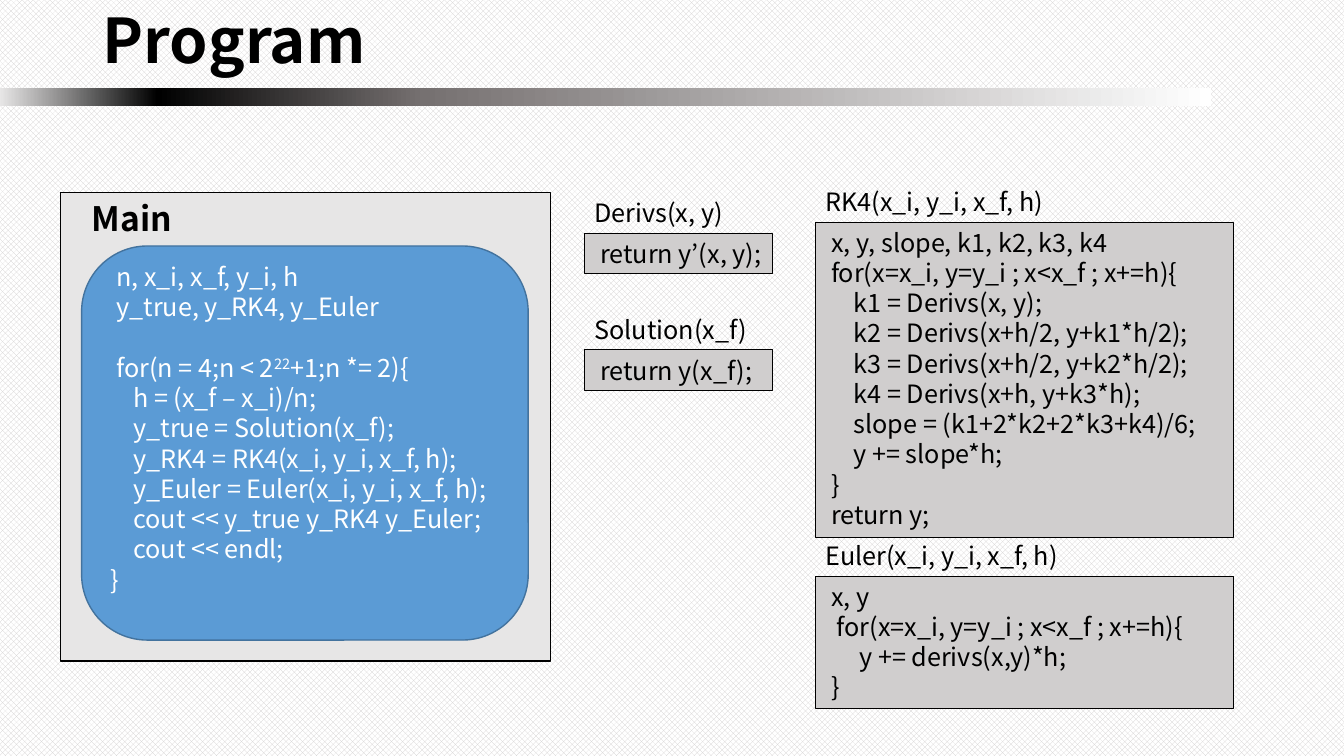
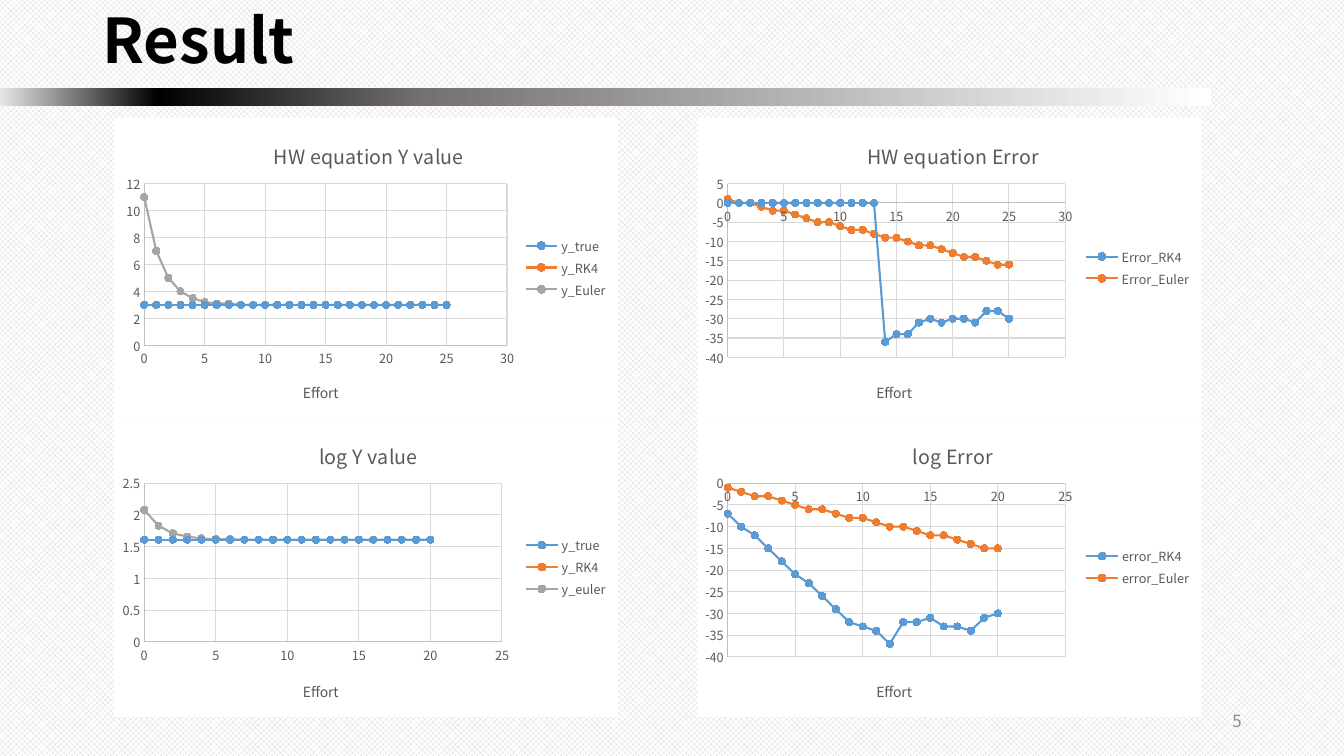
from pptx import Presentation
from pptx.chart.data import XyChartData
from pptx.dml.color import RGBColor
from pptx.enum.chart import XL_CHART_TYPE, XL_LEGEND_POSITION, XL_MARKER_STYLE, XL_TICK_MARK
from pptx.enum.dml import MSO_PATTERN
from pptx.enum.shapes import MSO_SHAPE
from pptx.enum.text import MSO_ANCHOR, MSO_AUTO_SIZE, PP_ALIGN
from pptx.oxml import parse_xml
from pptx.oxml.ns import nsdecls, qn
from pptx.util import Pt

RECT, ROUNDED = MSO_SHAPE.RECTANGLE, MSO_SHAPE.ROUNDED_RECTANGLE
LEFT, RIGHT = PP_ALIGN.LEFT, PP_ALIGN.RIGHT
TOP, MIDDLE = MSO_ANCHOR.TOP, MSO_ANCHOR.MIDDLE
CIRCLE, NO_TICK = XL_MARKER_STYLE.CIRCLE, XL_TICK_MARK.NONE
OPEN_DIAMOND = MSO_PATTERN.from_xml("openDmnd")

FONT = "Noto Sans CJK KR"
BLACK, WHITE, GRAY, PALE = "000000", "FFFFFF", "D0CECE", "E7E6E6"
BLUE, ORANGE, SILVER, DARK_BLUE = "5B9BD5", "ED7D31", "A5A5A5", "43739E"
CHART_TEXT, AXIS_LINE, GRID_LINE = "595959", "BFBFBF", "D9D9D9"
BAND_STOPS = [(0, PALE), (13, BLACK), (35, "767171"), (100, WHITE)]
LINE_STEP = 21.8

MAIN_CODE = [
    " n, x_i, x_f, y_i, h",
    " y_true, y_RK4, y_Euler",
    " for(n = 4;n < 2^22^+1;n *= 2){",
    "    h = (x_f – x_i)/n;",
    "    y_true = Solution(x_f);",
    "    y_RK4 = RK4(x_i, y_i, x_f, h);",
    "    y_Euler = Euler(x_i, y_i, x_f, h);",
    "    cout << y_true y_RK4 y_Euler;",
    "    cout << endl;",
    "}",
]
FUNCTIONS = [
    (417.6, 137.5, 134.6, 134.6, "Derivs(x, y)", [" return y’(x, y);"]),
    (417.6, 221, 134.6, 134.6, "Solution(x_f)", [" return y(x_f);"]),
    (582.5, 129.6, 298.8, 229.7, "RK4(x_i, y_i, x_f, h)", [
        " x, y, slope, k1, k2, k3, k4",
        " for(x=x_i, y=y_i ; x<x_f ; x+=h){",
        "     k1 = Derivs(x, y);",
        "     k2 = Derivs(x+h/2, y+k1*h/2);",
        "     k3 = Derivs(x+h/2, y+k2*h/2);",
        "     k4 = Derivs(x+h, y+k3*h);",
        "     slope = (k1+2*k2+2*k3+k4)/6;",
        "     y += slope*h;",
        " }",
        " return y;",
    ]),
    (582.5, 382.5, 298.8, 229.7, "Euler(x_i, y_i, x_f, h)", [
        " x, y",
        "  for(x=x_i, y=y_i ; x<x_f ; x+=h){",
        "      y += derivs(x,y)*h;",
        " }",
    ]),
]
CHARTS = [
    {"title": "HW equation Y value", "title_x": 0.31, "effort_x": 0.37,
     "plot": (0.06, 0.22, 0.72, 0.54), "x_axis": (0, 30, 5), "y_axis": (0, 12, 2),
     "series": [("y_true", BLUE, [3] * 26),
                ("y_RK4", ORANGE, [3] * 26),
                ("y_Euler", SILVER, [11, 7, 5, 4, 3.5, 3.2, 3.1, 3.1] + [3] * 18)]},
    {"title": "HW equation Error", "title_x": 0.33, "effort_x": 0.35,
     "plot": (0.06, 0.22, 0.67, 0.58), "x_axis": (0, 30, 5), "y_axis": (-40, 5, 5),
     "series": [("Error_RK4", BLUE, [0] * 14 + [-36, -34, -34, -31, -30, -31, -30, -30,
                                                -31, -28, -28, -30]),
                ("Error_Euler", ORANGE, [1, 0, 0, -1, -2, -2, -3, -4, -5, -5, -6, -7, -7,
                                         -8, -9, -9, -10, -11, -11, -12, -13, -14, -14,
                                         -15, -16, -16])]},
    {"title": "log Y value", "title_x": 0.4, "effort_x": 0.37,
     "plot": (0.06, 0.22, 0.71, 0.53), "x_axis": (0, 25, 5), "y_axis": (0, 2.5, 0.5),
     "series": [("y_true", BLUE, [1.61] * 21),
                ("y_RK4", ORANGE, [1.61] * 21),
                ("y_euler", SILVER, [2.08, 1.83, 1.71, 1.66, 1.63, 1.62, 1.62] + [1.61] * 14)]},
    {"title": "log Error", "title_x": 0.42, "effort_x": 0.35,
     "plot": (0.06, 0.22, 0.67, 0.58), "x_axis": (0, 25, 5), "y_axis": (-40, 0, 5),
     "series": [("error_RK4", BLUE, [-7, -10, -12, -15, -18, -21, -23, -26, -29, -32, -33,
                                     -34, -37, -32, -32, -31, -33, -33, -34, -31, -30]),
                ("error_Euler", ORANGE, [-1, -2, -3, -3, -4, -5, -6, -6, -7, -8, -8, -9,
                                         -10, -10, -11, -12, -12, -13, -14, -15, -15])]},
]


def color(value):
    return RGBColor.from_string(value)


def points(*values):
    return [Pt(value) for value in values]


def style_font(font, size, tint, bold=False):
    font.name, font.size, font.bold = FONT, Pt(size), bold
    font.color.rgb = color(tint)


def write(frame, lines, size=18, tint=BLACK, bold=False, align=LEFT, anchor=TOP,
          wrap=True, spacing=None, gaps=None):
    frame.word_wrap, frame.vertical_anchor = wrap, anchor
    frame.auto_size = MSO_AUTO_SIZE.NONE
    for index, line in enumerate(lines):
        para = frame.add_paragraph() if index else frame.paragraphs[0]
        para.alignment = align
        if spacing:
            para.line_spacing = spacing
        if gaps and index in gaps:
            para.space_before = Pt(gaps[index])
        for part, text in enumerate(line.split("^")):
            span = para.add_run()
            span.text = text
            style_font(span.font, size, tint, bold)
            if part % 2:
                span._r.get_or_add_rPr().set("baseline", "30000")


def add_text(page, place, text, **look):
    box = page.shapes.add_textbox(*points(*place))
    write(box.text_frame, [text], **look)


def add_box(page, place, fill, line=BLACK, width=0.75, kind=RECT):
    box = page.shapes.add_shape(kind, *points(*place))
    box.shadow.inherit = False
    box.fill.solid()
    box.fill.fore_color.rgb = color(fill)
    box.line.color.rgb = color(line)
    box.line.width = Pt(width)
    return box


def add_page(deck, layout, title, place):
    page = deck.slides.add_slide(layout)
    heading = page.shapes.title
    heading.left, heading.top, heading.width, heading.height = points(*place)
    write(heading.text_frame, [title], size=44, bold=True, anchor=MIDDLE, spacing=0.9)
    return page


def move_band_to_layout(page, layout):
    band = page.shapes.add_shape(RECT, *points(0, 62.6, 865.4, 13))
    band.shadow.inherit = False
    band.line.fill.background()
    band.fill.gradient()
    band.fill.gradient_angle = 0
    stops = band.element.spPr.find(".//" + qn("a:gsLst"))
    for stop in list(stops):
        stops.remove(stop)
    for percent, tint in BAND_STOPS:
        stops.append(parse_xml(f'<a:gs {nsdecls("a")} pos="{percent * 1000}">'
                               f'<a:srgbClr val="{tint}"/></a:gs>'))
    layout.shapes.element.insert(2, band.element)


def make_layout(parent, x, y, width=None, height=None):
    for old in parent.findall(qn("c:layout")):
        parent.remove(old)
    fields = [("xMode", "edge"), ("yMode", "edge"), ("x", x), ("y", y)]
    if width:
        fields = [("layoutTarget", "inner")] + fields + [("w", width), ("h", height)]
    body = "".join(f'<c:{name} val="{value}"/>' for name, value in fields)
    return parse_xml(f'<c:layout {nsdecls("c")}><c:manualLayout>{body}'
                     '</c:manualLayout></c:layout>')


def set_title(title, text, size, x, y):
    para = title.text_frame.paragraphs[0]
    span = para.add_run()
    span.text = text
    style_font(span.font, size, CHART_TEXT)
    layout = make_layout(title.element, x, y)
    title.element.find(qn("c:tx")).addnext(layout)


def style_axis(axis, scale):
    axis.minimum_scale, axis.maximum_scale, axis.major_unit = scale
    axis.major_tick_mark = axis.minor_tick_mark = NO_TICK
    axis.has_major_gridlines = True
    for line, tint in ((axis.format.line, AXIS_LINE),
                       (axis.major_gridlines.format.line, GRID_LINE)):
        line.color.rgb = color(tint)
        line.width = Pt(0.75)
    style_font(axis.tick_labels.font, 9, CHART_TEXT)
    axis.tick_labels.number_format = "General"
    axis.tick_labels.number_format_is_linked = False


def add_scatter(page, place, item):
    data = XyChartData()
    for name, tint, values in item["series"]:
        series = data.add_series(name)
        for effort, value in enumerate(values):
            series.add_data_point(effort, value)
    chart = page.shapes.add_chart(XL_CHART_TYPE.XY_SCATTER_LINES, *points(*place), data).chart
    style_font(chart.font, 10, BLACK)
    chart.has_title = True
    set_title(chart.chart_title, item["title"], 14, item["title_x"], 0.06)
    chart.has_legend = True
    chart.legend.position = XL_LEGEND_POSITION.RIGHT
    chart.legend.include_in_layout = False
    style_font(chart.legend.font, 9, CHART_TEXT)
    style_axis(chart.category_axis, item["x_axis"])
    style_axis(chart.value_axis, item["y_axis"])
    chart.category_axis.has_title = True
    set_title(chart.category_axis.axis_title, "Effort", 10, item["effort_x"], 0.87)
    plot = chart.plots[0]
    plot.vary_by_categories = False
    for series, (name, tint, values) in zip(plot.series, item["series"]):
        series.smooth = False
        series.format.line.color.rgb = color(tint)
        series.format.line.width = Pt(1.5)
        marker = series.marker
        marker.style, marker.size = CIRCLE, 5
        marker.format.fill.solid()
        marker.format.fill.fore_color.rgb = color(tint)
        marker.format.line.color.rgb = color(tint)
    area = chart.element.find(".//" + qn("c:plotArea"))
    area.insert(0, make_layout(area, *item["plot"]))
    chart.element.find(qn("c:chart")).addnext(parse_xml(
        f'<c:spPr {nsdecls("c", "a")}><a:solidFill><a:srgbClr val="{WHITE}"/></a:solidFill>'
        '<a:ln><a:noFill/></a:ln></c:spPr>'))


def build_program(page):
    add_box(page, (43.2, 137.5, 350, 334.8), PALE, width=1)
    add_text(page, (58.3, 137.5, 119.5, 100.8), "Main", size=24, bold=True, wrap=False)
    main_box = add_box(page, (58.3, 175.7, 319, 281.5), BLUE, DARK_BLUE, 1, ROUNDED)
    main_box.text_frame.margin_bottom = Pt(3.6 + LINE_STEP)
    write(main_box.text_frame, MAIN_CODE, tint=WHITE, anchor=MIDDLE, gaps={2: LINE_STEP})
    for left, top, width, label_width, label, code in FUNCTIONS:
        label_height = LINE_STEP + 7.2
        add_text(page, (left, top, label_width, label_height), label)
        body = add_box(page, (left, top + label_height, width, len(code) * LINE_STEP + 7.2), GRAY)
        write(body.text_frame, code)


def build_result(page):
    for index, item in enumerate(CHARTS):
        row, column = divmod(index, 2)
        add_scatter(page, (81.4 + column * 416.8, 84.1 + row * 214, 360, 214), item)
    add_text(page, (678, 500.5, 216, 28.8), "5", size=12, tint="8C8C8C",
             align=RIGHT, anchor=MIDDLE)


def main():
    deck = Presentation()
    deck.slide_width, deck.slide_height = points(960, 540)
    layout = deck.slide_layouts[5]
    backdrop = deck.slide_master.background.fill
    backdrop.patterned()
    backdrop.pattern = OPEN_DIAMOND
    backdrop.fore_color.rgb = color(GRAY)
    backdrop.back_color.rgb = color(WHITE)
    program = add_page(deck, layout, "Program", (66, 3.6, 438, 55.4))
    move_band_to_layout(program, layout)
    build_program(program)
    build_result(add_page(deck, layout, "Result", (66, 0, 828, 62.6)))
    deck.save("out.pptx")


if __name__ == "__main__":
    main()
